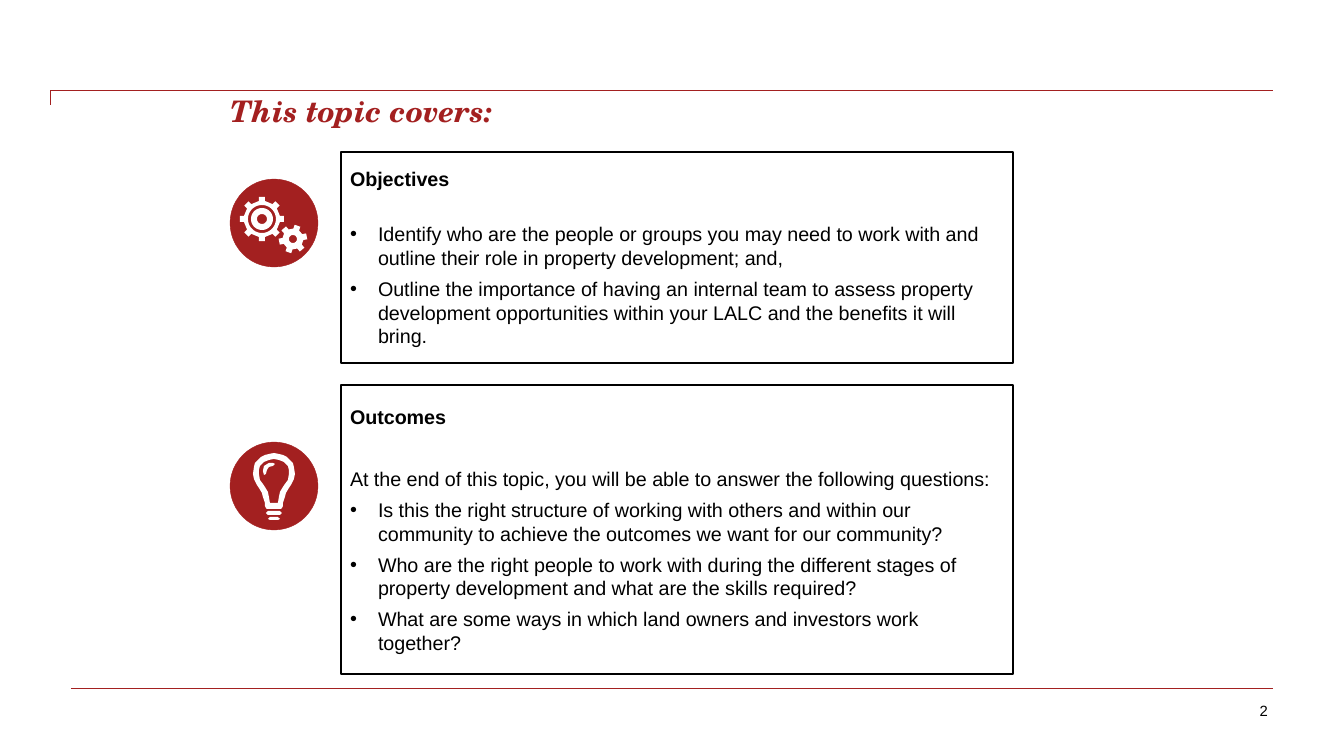
import math

from lxml import etree
from pptx import Presentation
from pptx import util as u
from pptx.dml.color import RGBColor
from pptx.enum import shapes, text
from pptx.oxml import ns

PX = 914400 / 100.8
RED = RGBColor(0xA3, 0x20, 0x20)
BLACK = RGBColor(0, 0, 0)
WHITE = RGBColor(255, 255, 255)
BODY_FONT = "Arial"
TITLE_FONT = "TeX Gyre Schola"
BODY_SIZE = 14.1
INDENT = 28
GAP = 5.3
HEADING_GAP = 16.9

OBJECTIVES = [
    "Identify who are the people or groups you may need to work with and outline their role in property development; and,",
    "Outline the importance of having an internal team to assess property development opportunities within your LALC and the benefits it will bring.",
]
OUTCOMES_INTRO = "At the end of this topic, you will be able to answer the following questions:"
OUTCOMES = [
    "Is this the right structure of working with others and within our community to achieve the outcomes we want for our community?",
    "Who are the right people to work with during the different stages of property development and what are the skills required?",
    "What are some ways in which land owners and investors work together?",
]
BULB_PROFILES = [
    [(0, 453), (5, 454), (9, 455), (13, 457), (16, 460), (19, 463), (20, 467), (21, 474), (20, 479),
     (17, 485), (15, 488), (12, 493), (11, 497), (9, 503), (9, 506), (8, 508), (7, 509)],
    [(0, 459), (5, 460), (10, 462), (14, 466), (15, 470), (15, 474), (14, 480), (11, 484),
     (9, 487), (6, 492), (5, 497), (4, 503)],
    [(6, 511), (8, 513), (6, 515)],
    [(4, 517), (6, 519), (4, 520)],
]
BULB_GLARE = [(266, 474), (267, 470), (269, 467), (273, 466), (275, 464), (273, 463),
              (269, 463), (264, 466), (263, 471), (264, 475)]


def px(value):
    return u.Emu(round(value * PX))


def write(paragraph, words, size=BODY_SIZE, font=BODY_FONT, color=BLACK, bold=False, italic=False,
          align=text.PP_ALIGN.LEFT, before=0, bullet=False):
    paragraph.alignment = align
    paragraph.space_before = u.Pt(before)
    paragraph.space_after = u.Pt(0)
    paragraph.line_spacing = 1.0
    run = paragraph.add_run()
    run.text = words
    run.font.size = u.Pt(size)
    run.font.name = font
    run.font.color.rgb = color
    run.font.bold = bold
    run.font.italic = italic
    properties = paragraph._p.get_or_add_pPr()
    indent = px(INDENT) if bullet else 0
    properties.set("marL", str(indent))
    properties.set("indent", str(-indent))
    if bullet:
        etree.SubElement(properties, ns.qn("a:buChar")).set("char", "•")
    else:
        etree.SubElement(properties, ns.qn("a:buNone"))


def circle(x, y, radius):
    angles = [math.radians(10 * step) for step in range(36)]
    return [(x + radius * math.cos(a), y + radius * math.sin(a)) for a in angles]


def gear(x, y, teeth, root, tip, half_width, turn=0):
    points = []
    for tooth in range(teeth):
        angle = math.radians(turn + 360 / teeth * tooth)
        for along, across in ((root, -half_width), (tip, -half_width), (tip, half_width), (root, half_width)):
            points.append((x + along * math.cos(angle) - across * math.sin(angle),
                           y + along * math.sin(angle) + across * math.cos(angle)))
    return points


def mirrored(profile, axis):
    return [(axis + dx, y) for dx, y in profile] + [(axis - dx, y) for dx, y in reversed(profile)]


class TopicSlide:
    def __init__(self, presentation):
        self.slide = presentation.slides.add_slide(presentation.slide_layouts[3])

    def place(self, shape, left, top, width, height):
        shape.left, shape.top, shape.width, shape.height = map(px, (left, top, width, height))

    def frame(self, shape, anchor, side=0, edge=0):
        frame = shape.text_frame
        frame.word_wrap = True
        frame.auto_size = text.MSO_AUTO_SIZE.NONE
        frame.vertical_anchor = anchor
        frame.margin_left = frame.margin_right = px(side)
        frame.margin_top = frame.margin_bottom = px(edge)
        return frame

    def title(self, words, *box):
        shape = self.slide.shapes.title
        self.place(shape, *box)
        frame = self.frame(shape, text.MSO_ANCHOR.TOP)
        write(frame.paragraphs[0], words, size=21.2, font=TITLE_FONT, color=RED, bold=True, italic=True)

    def panel(self, index, box, entries):
        shape = self.slide.placeholders[index]
        self.place(shape, *box)
        shape.fill.solid()
        shape.fill.fore_color.rgb = WHITE
        shape.line.color.rgb = BLACK
        shape.line.width = u.Pt(2)
        frame = self.frame(shape, text.MSO_ANCHOR.MIDDLE, 9, 4)
        for number, (words, style) in enumerate(entries):
            paragraph = frame.add_paragraph() if number else frame.paragraphs[0]
            write(paragraph, words, **style)

    def label(self, words, *box, **style):
        shape = self.slide.shapes.add_textbox(*map(px, box))
        write(self.frame(shape, text.MSO_ANCHOR.MIDDLE, 10, 5).paragraphs[0], words, **style)

    def rule(self, kind, *ends):
        line = self.slide.shapes.add_connector(kind, *map(px, ends))
        line.line.color.rgb = RED
        line.line.width = u.Pt(0.75)
        etree.SubElement(line._element.spPr, ns.qn("a:effectLst"))
        return line

    def elbow(self, *ends):
        line = self.rule(shapes.MSO_CONNECTOR.ELBOW, *ends)
        guides = line._element.spPr.find(ns.qn("a:prstGeom")).find(ns.qn("a:avLst"))
        guide = etree.SubElement(guides, ns.qn("a:gd"))
        guide.set("name", "adj1")
        guide.set("fmla", "val 0")

    def icon(self, left, top, size, outlines):
        group = self.slide.shapes.add_group_shape()
        disc = group.shapes.add_shape(shapes.MSO_SHAPE.OVAL, *map(px, (left, top, size, size)))
        disc.shadow.inherit = False
        disc.fill.solid()
        disc.fill.fore_color.rgb = RED
        disc.line.color.rgb = RED
        disc.line.width = u.Pt(0.25)
        scaled = [[(px(x), px(y)) for x, y in outline] for outline in outlines]
        builder = group.shapes.build_freeform(*scaled[0][0])
        for number, points in enumerate(scaled):
            if number:
                builder.move_to(*points[0])
            builder.add_line_segments(points[1:], close=True)
        symbol = builder.convert_to_shape()
        symbol.shadow.inherit = False
        symbol.fill.solid()
        symbol.fill.fore_color.rgb = WHITE
        symbol.line.fill.background()


def main():
    presentation = Presentation()
    presentation.slide_width, presentation.slide_height = px(1344), px(756)
    topic = TopicSlide(presentation)
    topic.elbow(51, 105, 1273, 91)
    topic.rule(shapes.MSO_CONNECTOR.STRAIGHT, 71, 689, 1273, 689)
    topic.title("This topic covers:", 230, 93, 864, 98)

    heading = {"bold": True}
    item = {"bullet": True, "before": GAP}
    first_item = {"bullet": True, "before": GAP + HEADING_GAP}
    intro = {"before": 2 * GAP + HEADING_GAP}
    topic.panel(1, (341, 152, 672, 211),
                [("Objectives", heading), (OBJECTIVES[0], first_item), (OBJECTIVES[1], item)])
    topic.panel(2, (341, 385, 672, 289),
                [("Outcomes", {"bold": True, "before": GAP}), (OUTCOMES_INTRO, intro)]
                + [(words, item) for words in OUTCOMES])

    topic.icon(230, 179, 88, [
        gear(262, 219, 8, 18, 22, 3), circle(262, 219, 14), circle(262, 219, 11), circle(262, 219, 5),
        gear(293, 239, 6, 10, 14, 3, turn=-11), circle(293, 239, 4)])
    topic.icon(230, 442, 88, [mirrored(profile, 274) for profile in BULB_PROFILES] + [BULB_GLARE])
    topic.label("2", 911, 693, 367, 35, size=10.6, align=text.PP_ALIGN.RIGHT)
    presentation.save("out.pptx")


if __name__ == "__main__":
    main()
